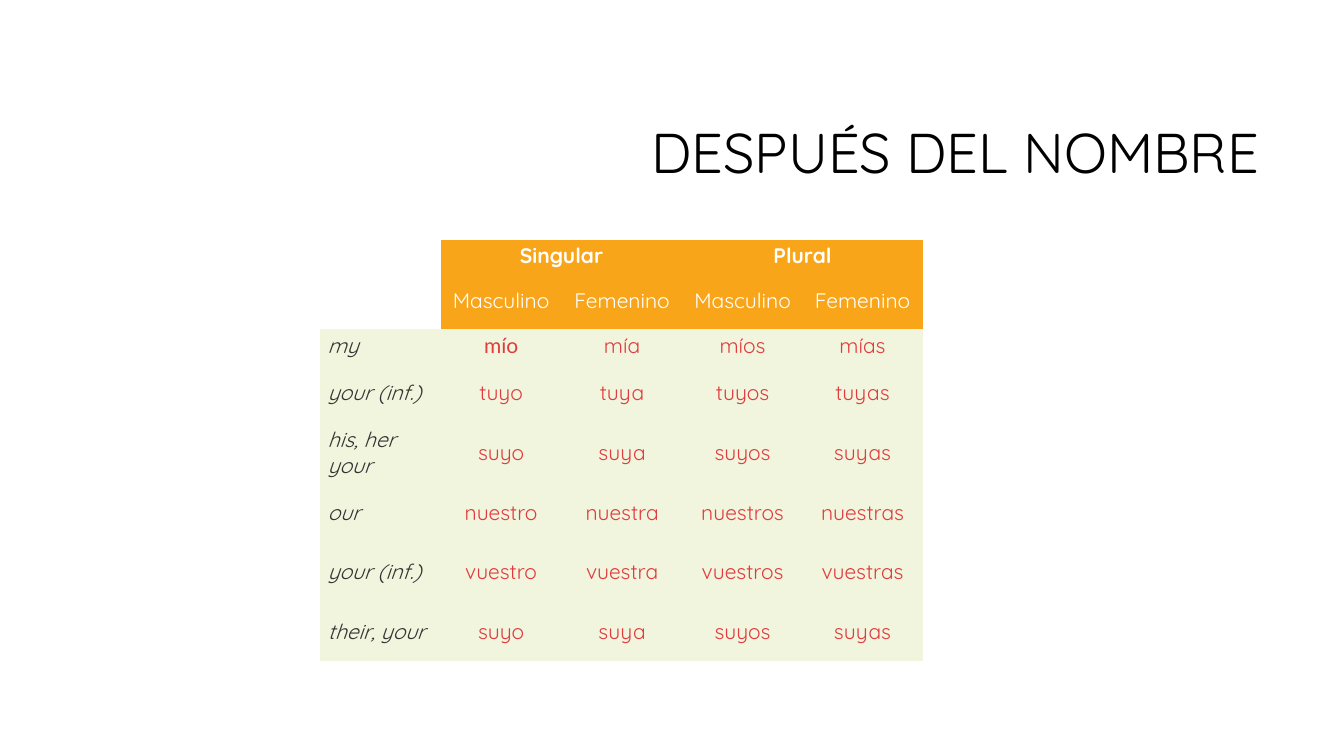
import pptx
import pptx.util
import pptx.dml.color
import pptx.enum.text
import lxml.etree
from dataclasses import dataclass
from pptx.util import Inches

A = "{http://schemas.openxmlformats.org/drawingml/2006/main}"
NO_GRID_STYLE = "{2D5ABB26-0587-4C30-8999-92F81FD0307C}"


@dataclass(frozen=True)
class Theme:
    font: str = "Quicksand"
    accent_font: str = "Lato"
    title_size: int = 40
    table_size: int = 15
    white: str = "FFFFFF"
    black: str = "000000"
    header: str = "F9A51A"
    body: str = "F1F5DD"
    label: str = "333333"
    form: str = "E03C3F"


T = Theme()
ALIGN = pptx.enum.text.PP_ALIGN
MIDDLE = pptx.enum.text.MSO_ANCHOR.MIDDLE

# Empty strings are the blank corner or cells covered by a span
HEADERS = [
    ["", "Singular", "", "Plural", ""],
    ["", "Masculino", "Femenino", "Masculino", "Femenino"],
]
PRONOUNS = [
    ("my", "mío", "mía"),
    ("your (inf.)", "tuyo", "tuya"),
    ("his, her your", "suyo", "suya"),
    ("our", "nuestro", "nuestra"),
    ("your (inf.)", "vuestro", "vuestra"),
    ("their, your", "suyo", "suya"),
]
COL_WIDTHS = [1.2, 1.2, 1.2, 1.19, 1.19]
ROW_HEIGHTS = [0.32, 0.56, 0.34] + [0.59] * 5


def write(tf, text, size, color, font=T.font, align=ALIGN.LEFT, bold=False, italic=False):
    p = tf.paragraphs[0]
    p.alignment = align
    if not text:
        # Keeps an empty cell from forcing a taller row
        lxml.etree.SubElement(p._p, A + "endParaRPr", sz=str(size * 100))
        return p
    r = p.add_run()
    r.text = text
    r.font.size = pptx.util.Pt(size)
    r.font.name = font
    r.font.bold = bold
    r.font.italic = italic
    r.font.color.rgb = pptx.dml.color.RGBColor.from_string(color)
    return p


def add_title(s, text, x, y, w, h):
    sp = s.shapes.title
    sp.left, sp.top, sp.width, sp.height = map(Inches, (x, y, w, h))
    tf = sp.text_frame
    tf.word_wrap = True
    tf.auto_size = pptx.enum.text.MSO_AUTO_SIZE.NONE
    tf.vertical_anchor = MIDDLE
    p = write(tf, text, T.title_size, T.black, align=ALIGN.RIGHT)
    p.line_spacing = 0.9


def fill_cell(cell, text, fill, color, inset, **fmt):
    cell.fill.solid()
    cell.fill.fore_color.rgb = pptx.dml.color.RGBColor.from_string(fill)
    cell.vertical_anchor = MIDDLE
    cell.margin_left = cell.margin_right = Inches(inset)
    cell.margin_top = cell.margin_bottom = Inches(inset / 2)
    write(cell.text_frame, text, T.table_size, color, **fmt)


def add_pronoun_table(s, x, y):
    frame = s.shapes.add_table(
        len(ROW_HEIGHTS), len(COL_WIDTHS), Inches(x), Inches(y),
        Inches(sum(COL_WIDTHS)), Inches(sum(ROW_HEIGHTS)))
    table = frame.table
    table.first_row = table.horz_banding = False
    table._tbl.tblPr.find(A + "tableStyleId").text = NO_GRID_STYLE
    for col, width in zip(table.columns, COL_WIDTHS):
        col.width = Inches(width)
    for row, height in zip(table.rows, ROW_HEIGHTS):
        row.height = Inches(height)

    # Header: number above gender
    for i, row in enumerate(HEADERS):
        for j, text in enumerate(row):
            fill_cell(table.cell(i, j), text, T.header if j else T.white, T.white,
                      0.06, align=ALIGN.CENTER, bold=i == 0)
    for j in (1, 3):
        table.cell(0, j).merge(table.cell(0, j + 1))

    # Body: English label, then singular and plural forms
    for i, (label, masc, fem) in enumerate(PRONOUNS, len(HEADERS)):
        fill_cell(table.cell(i, 0), label, T.body, T.label, 0.08, italic=True)
        for j, form in enumerate((masc, fem, masc + "s", fem + "s"), 1):
            font = T.accent_font if form == "mío" else T.font
            fill_cell(table.cell(i, j), form, T.body, T.form, 0.08,
                      font=font, align=ALIGN.CENTER)


def main():
    prs = pptx.Presentation()
    prs.slide_width, prs.slide_height = Inches(13.33), Inches(7.5)
    s = prs.slides.add_slide(prs.slide_layouts[5])
    add_title(s, "DESPUÉS DEL NOMBRE", 3.17, 0.84, 9.42, 1.41)
    add_pronoun_table(s, 3.17, 2.38)
    prs.save("out.pptx")


if __name__ == "__main__":
    main()
